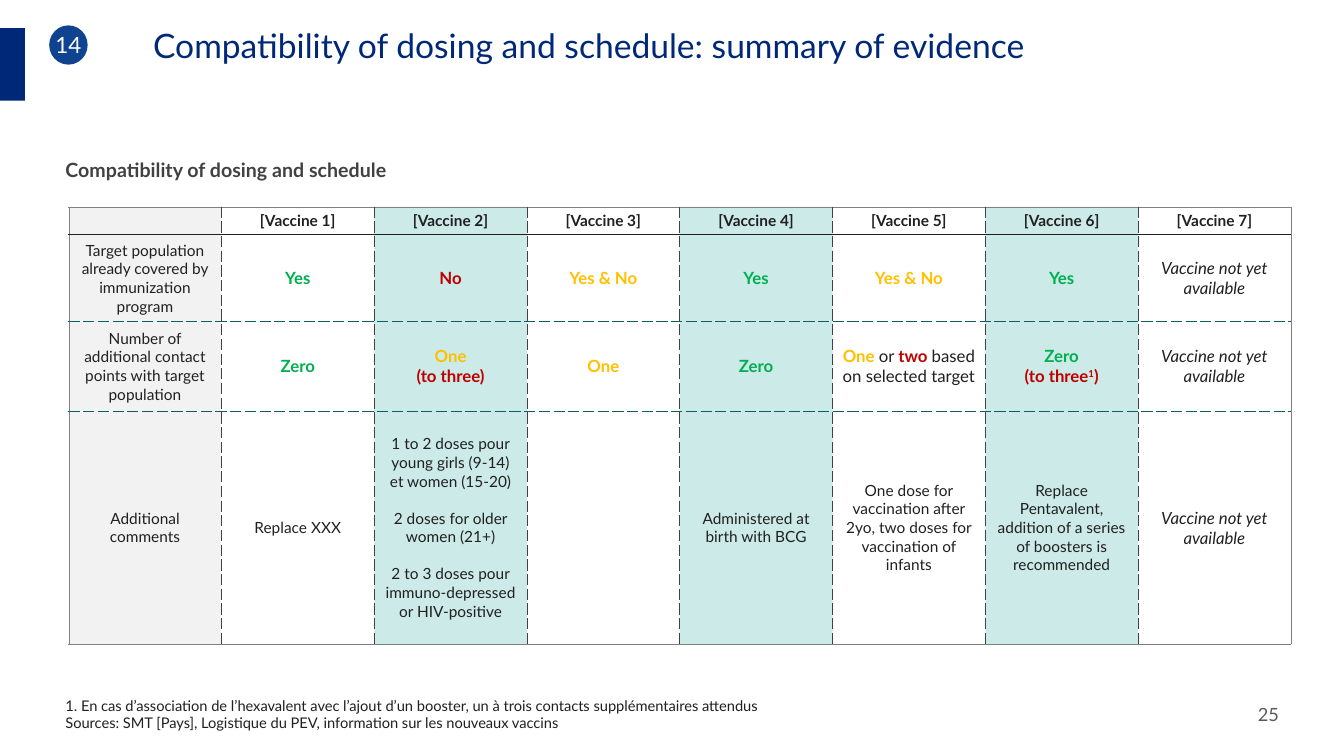
from lxml.etree import SubElement
from pptx import Presentation
from pptx.dml.color import RGBColor
from pptx.enum.shapes import MSO_SHAPE
from pptx.enum.text import MSO_ANCHOR, PP_ALIGN
from pptx.oxml.ns import qn
from pptx.util import Cm, Pt

COLORS = {
    "navy": "002878", "badge": "0F438F", "white": "FFFFFF", "ink": "202020",
    "heading": "414141", "page": "595959", "label": "F2F2F2", "teal": "009688",
    "green": "00B050", "red": "C00000", "amber": "FFC000",
    "frame": "808080", "dash": "0F5D61",
}
FONT = "Lato"

STYLES = {
    "title": {"size": 24, "color": "navy"},
    "badge": {"size": 16, "color": "white"},
    "heading": {"size": 14, "color": "heading", "bold": True},
    "page": {"size": 13, "color": "page"},
    "footnote": {"size": 10.5, "color": "ink"},
    "header": {"size": 11, "color": "ink", "bold": True},
    "body": {"size": 11, "color": "ink"},
    "plain": {"size": 12, "color": "ink"},
    "pending": {"size": 12, "color": "ink", "italic": True},
    "green": {"size": 12, "color": "green", "bold": True},
    "red": {"size": 12, "color": "red", "bold": True},
    "amber": {"size": 12, "color": "amber", "bold": True},
    "superscript": {"size": 12, "color": "red", "bold": True, "baseline": 30000},
}

FRAME_LINE = ("frame", 0.25, "solid")
HEADER_LINE = ("ink", 0.75, "solid")
COLUMN_LINE = ("heading", 0.5, "sysDash")
ROW_LINE = ("dash", 0.5, "sysDash")

COLUMN_WIDTH = 3.85
ROW_HEIGHTS = [0.71, 2.18, 2.26, 5.87]


def line(text, style):
    return [(text, style)]


YES = [line("Yes", "green")]
YES_AND_NO = [line("Yes & No", "amber")]
ZERO = [line("Zero", "green")]
PENDING = [line("Vaccine not yet available", "pending")]

ROWS = [
    [[]] + [[line(f"[Vaccine {number}]", "header")] for number in range(1, 8)],
    [
        [line("Target population already covered by immunization program", "body")],
        YES, [line("No", "red")], YES_AND_NO, YES, YES_AND_NO, YES, PENDING,
    ],
    [
        [line("Number of additional contact points with target population", "body")],
        ZERO,
        [line("One", "amber"), line("(to three)", "red")],
        [line("One", "amber")],
        ZERO,
        [[("One ", "amber"), ("or ", "plain"), ("two ", "red"),
          ("based on selected target", "plain")]],
        [line("Zero", "green"),
         [("(to three", "red"), ("1", "superscript"), (")", "red")]],
        PENDING,
    ],
    [
        [line("Additional comments", "body")],
        [line("Replace XXX", "body")],
        [line("1 to 2 doses pour young girls (9-14) et women (15-20)", "body"),
         line("2 doses for older women (21+)", "body"),
         line("2 to 3 doses pour immuno-depressed or HIV-positive", "body")],
        [],
        [line("Administered at birth with BCG", "body")],
        [line("One dose for vaccination after 2yo, two doses for vaccination of infants", "body")],
        [line("Replace Pentavalent, addition of a series of boosters is recommended", "body")],
        PENDING,
    ],
]


def rgb(name):
    return RGBColor.from_string(COLORS[name])


def add_run(paragraph, text, style):
    settings = STYLES[style]
    run = paragraph.add_run()
    run.text = text
    run.font.name = FONT
    run.font.size = Pt(settings["size"])
    run.font.bold = settings.get("bold", False)
    run.font.italic = settings.get("italic", False)
    run.font.color.rgb = rgb(settings["color"])
    if "baseline" in settings:
        run.font._element.set("baseline", str(settings["baseline"]))


def write_paragraphs(frame, paragraphs, alignment=PP_ALIGN.LEFT, gap=0):
    for index, runs in enumerate(paragraphs):
        paragraph = frame.add_paragraph() if index else frame.paragraphs[0]
        paragraph.alignment = alignment
        paragraph.space_before = Pt(gap if index else 0)
        for text, style in runs:
            add_run(paragraph, text, style)


def set_margins(target, left, top, right, bottom):
    target.margin_left, target.margin_top = Cm(left), Cm(top)
    target.margin_right, target.margin_bottom = Cm(right), Cm(bottom)


def add_text(slide, box, paragraphs, margins=(0.25, 0.13, 0.25, 0.13), anchor=MSO_ANCHOR.TOP):
    frame = slide.shapes.add_textbox(*map(Cm, box)).text_frame
    frame.word_wrap = True
    frame.vertical_anchor = anchor
    set_margins(frame, *margins)
    write_paragraphs(frame, paragraphs)


def add_block(slide, kind, box, color):
    shape = slide.shapes.add_shape(kind, *map(Cm, box))
    shape.shadow.inherit = False
    shape.fill.solid()
    shape.fill.fore_color.rgb = rgb(color)
    shape.line.fill.background()
    return shape


def add_badge(slide, text):
    frame = add_block(slide, MSO_SHAPE.OVAL, (1.24, 0.64, 0.97, 0.99), "badge").text_frame
    frame.vertical_anchor = MSO_ANCHOR.MIDDLE
    set_margins(frame, 0, 0.13, 0, 0.13)
    write_paragraphs(frame, [line(text, "badge")], PP_ALIGN.CENTER)


def add_border(cell, tag, border):
    color, width, dash = border
    properties = cell._tc.get_or_add_tcPr()
    edge = SubElement(properties, qn(f"a:{tag}"), w=str(Pt(width)))
    fill = SubElement(edge, qn("a:solidFill"))
    SubElement(fill, qn("a:srgbClr"), val=COLORS[color])
    SubElement(edge, qn("a:prstDash"), val=dash)


def add_borders(cell, row, column):
    last_row, last_column = len(ROWS) - 1, len(ROWS[0]) - 1
    horizontal = [FRAME_LINE, HEADER_LINE] + [ROW_LINE] * (last_row - 1) + [FRAME_LINE]
    vertical = [FRAME_LINE] + [COLUMN_LINE] * last_column + [FRAME_LINE]
    add_border(cell, "lnL", vertical[column])
    add_border(cell, "lnR", vertical[column + 1])
    add_border(cell, "lnT", horizontal[row])
    add_border(cell, "lnB", horizontal[row + 1])


def fill_cell(cell, column):
    shaded = column in (2, 4, 6)
    cell.fill.solid()
    cell.fill.fore_color.rgb = rgb("teal" if shaded else "white" if column else "label")
    if shaded:
        color = cell._tc.tcPr.find(qn("a:solidFill")).find(qn("a:srgbClr"))
        SubElement(color, qn("a:alpha"), val="20000")


def write_cell(cell, paragraphs, gap):
    cell.vertical_anchor = MSO_ANCHOR.MIDDLE
    set_margins(cell, 0.25, 0.08, 0.25, 0.08)
    write_paragraphs(cell.text_frame, paragraphs, PP_ALIGN.CENTER, gap)
    if not paragraphs:
        SubElement(cell.text_frame.paragraphs[0]._p, qn("a:endParaRPr"), sz="1100")


def add_evidence_table(slide):
    columns = len(ROWS[0])
    table = slide.shapes.add_table(
        len(ROWS), columns, Cm(1.73), Cm(5.21),
        Cm(COLUMN_WIDTH * columns), Cm(sum(ROW_HEIGHTS))).table
    table.first_row = table.horz_banding = False
    for column in table.columns:
        column.width = Cm(COLUMN_WIDTH)
    for row, contents in enumerate(ROWS):
        table.rows[row].height = Cm(ROW_HEIGHTS[row])
        for column, paragraphs in enumerate(contents):
            cell = table.cell(row, column)
            write_cell(cell, paragraphs, 13.2 if row == len(ROWS) - 1 else 0)
            add_borders(cell, row, column)
            fill_cell(cell, column)


def main():
    presentation = Presentation()
    presentation.slide_width, presentation.slide_height = Cm(33.87), Cm(19.05)
    slide = presentation.slides.add_slide(presentation.slide_layouts[6])
    add_text(slide, (1.32, 0.64, 31.88, 2.03),
             [line("Compatibility of dosing and schedule: summary of evidence", "title")],
             (2.54, 0, 0, 0))
    add_text(slide, (31.37, 17.27, 2.03, 1.45), [line("25", "page")],
             (0.33, 0.33, 0.33, 0.33), MSO_ANCHOR.MIDDLE)
    add_text(slide, (1.4, 3.86, 19.71, 0.86),
             [line("Compatibility of dosing and schedule", "heading")])
    add_text(slide, (1.4, 17.5, 28.27, 0.99), [
        line("1. En cas d’association de l’hexavalent avec l’ajout d’un booster, "
             "un à trois contacts supplémentaires attendus", "footnote"),
        line("Sources: SMT [Pays], Logistique du PEV, information sur les nouveaux vaccins",
             "footnote"),
    ], anchor=MSO_ANCHOR.MIDDLE)
    add_badge(slide, "14")
    add_block(slide, MSO_SHAPE.RECTANGLE, (0, 0.71, 0.63, 1.83), "navy")
    add_evidence_table(slide)
    presentation.save("out.pptx")


if __name__ == "__main__":
    main()
